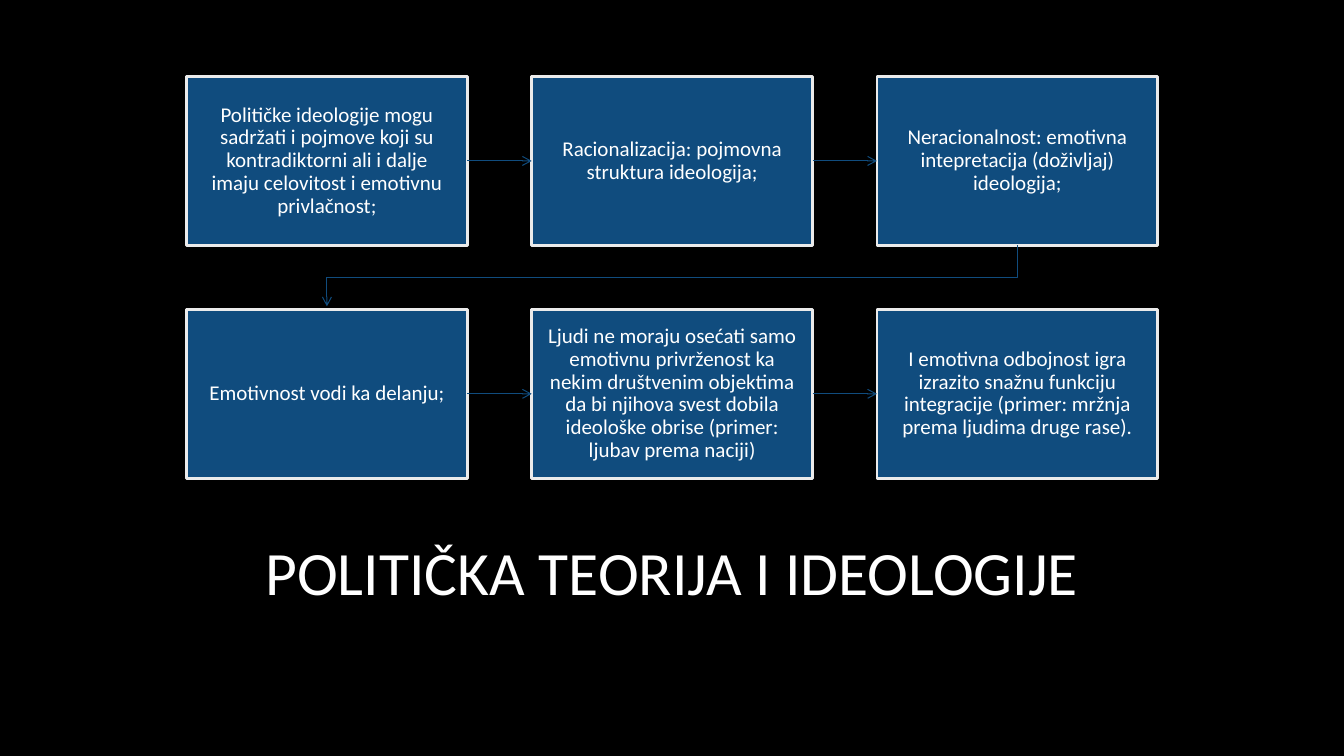
from lxml import etree
from pptx import Presentation
from pptx.dml.color import RGBColor
from pptx.enum.shapes import MSO_CONNECTOR, MSO_SHAPE
from pptx.enum.text import MSO_ANCHOR, PP_ALIGN
from pptx.oxml.ns import qn
from pptx.util import Cm, Pt

STRAIGHT = MSO_CONNECTOR.STRAIGHT
RECTANGLE = MSO_SHAPE.RECTANGLE
MIDDLE = MSO_ANCHOR.MIDDLE
CENTER = PP_ALIGN.CENTER

COLORS = {"background": "000000", "step": "104C7E", "border": "EBEBEB", "text": "FFFFFF"}
FONT = "Calibri"
TITLE = "POLITIČKA TEORIJA I IDEOLOGIJE"
STEPS = [
    "Političke ideologije mogu sadržati i pojmove koji su kontradiktorni ali i dalje "
    "imaju celovitost i emotivnu privlačnost;",
    "Racionalizacija: pojmovna struktura ideologija;",
    "Neracionalnost: emotivna intepretacija (doživljaj) ideologija;",
    "Emotivnost vodi ka delanju;",
    "Ljudi ne moraju osećati samo emotivnu privrženost ka nekim društvenim objektima "
    "da bi njihova svest dobila ideološke obrise (primer: ljubav prema naciji)",
    "I emotivna odbojnost igra izrazito snažnu funkciju integracije (primer: mržnja "
    "prema ljudima druge rase).",
]
COLUMNS = 3
STEP_WIDTH, STEP_HEIGHT = Cm(7.08), Cm(4.25)
ARROW_GAP = Cm(0.08)


def color(name):
    return RGBColor.from_string(COLORS[name])


def write(frame, text, size):
    frame.word_wrap = True
    frame.vertical_anchor = MIDDLE
    paragraph = frame.paragraphs[0]
    paragraph.alignment = CENTER
    run = paragraph.add_run()
    run.text = text
    run.font.size = Pt(size)
    run.font.name = FONT
    run.font.color.rgb = color("text")
    return paragraph


def style_arrow(arrow):
    arrow.line.color.rgb = color("step")
    arrow.line.width = Pt(0.75)
    etree.SubElement(arrow.line._get_or_add_ln(), qn("a:tailEnd"), type="arrow")


def add_title(slide, left, top, width, height):
    title = slide.shapes.title
    title.left, title.top, title.width, title.height = left, top, width, height
    write(title.text_frame, TITLE, 44)


def add_step(slide, text, left, top):
    step = slide.shapes.add_shape(RECTANGLE, left, top, STEP_WIDTH, STEP_HEIGHT)
    step.shadow.inherit = False
    step.fill.solid()
    step.fill.fore_color.rgb = color("step")
    step.line.color.rgb = color("border")
    step.line.width = Pt(2)
    frame = step.text_frame
    frame.margin_left = frame.margin_right = Cm(0.36)
    frame.margin_top = frame.margin_bottom = Cm(0.36)
    write(frame, text, 15).line_spacing = 0.9
    return step


def add_next_arrow(slide, start, end):
    arrow = slide.shapes.add_connector(STRAIGHT, 0, 0, 0, 0)
    arrow.begin_connect(start, 3)
    arrow.end_connect(end, 1)
    style_arrow(arrow)
    etree.SubElement(arrow._element.spPr, qn("a:effectLst"))


def add_row_turn(slide, start, end):
    start_x = start.left + start.width // 2
    end_x = end.left + end.width // 2
    start_y = start.top + start.height
    middle_y = (start_y + end.top) // 2
    outline = slide.shapes.build_freeform(start_x, start_y)
    outline.add_line_segments(
        [(start_x, middle_y), (end_x, middle_y), (end_x, end.top - ARROW_GAP)], close=False
    )
    turn = outline.convert_to_shape()
    turn.shadow.inherit = False
    turn.fill.background()
    style_arrow(turn)


def add_flow(slide, left, top, width, height):
    column_pitch = (width - STEP_WIDTH) // (COLUMNS - 1)
    row_pitch = height - STEP_HEIGHT
    steps = []
    for index, text in enumerate(STEPS):
        row, column = divmod(index, COLUMNS)
        steps.append(
            add_step(slide, text, left + column * column_pitch, top + row * row_pitch)
        )
    # Each step leads to the next; the end of a row turns down to the next row
    for start, end in zip(steps, steps[1:]):
        connect = add_next_arrow if start.top == end.top else add_row_turn
        connect(slide, start, end)


def main():
    presentation = Presentation()
    presentation.slide_width, presentation.slide_height = Cm(33.87), Cm(19.05)
    slide = presentation.slides.add_slide(presentation.slide_layouts[5])
    # Background
    slide.background.fill.solid()
    slide.background.fill.fore_color.rgb = color("background")
    # Title below the flow of steps
    add_title(slide, Cm(2.87), Cm(12.7), Cm(28.14), Cm(3.38))
    add_flow(slide, Cm(4.7), Cm(1.93), Cm(24.48), Cm(10.12))
    presentation.save("out.pptx")


if __name__ == "__main__":
    main()
